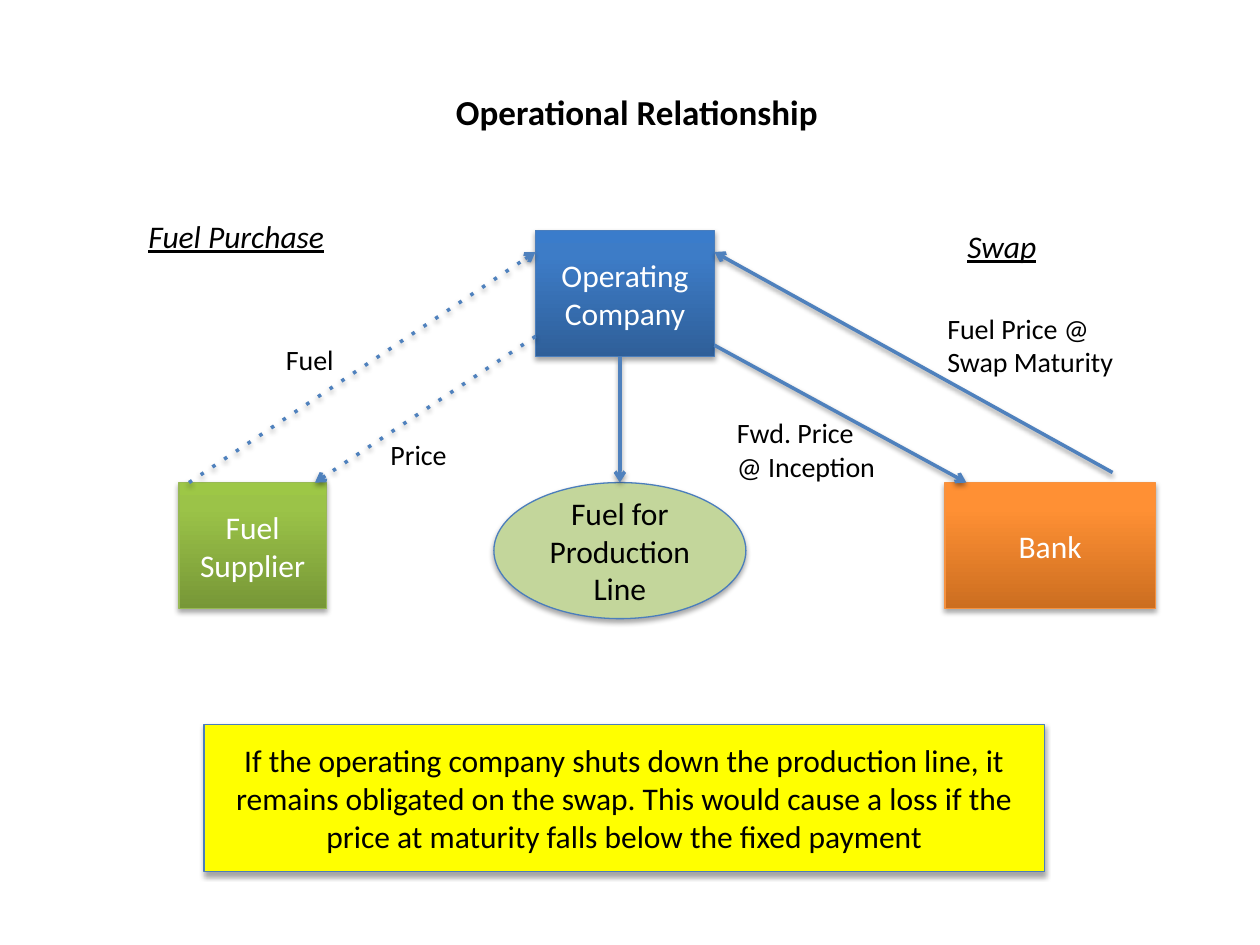
from copy import deepcopy
from dataclasses import dataclass

from lxml import etree
from pptx import Presentation
from pptx.dml.color import RGBColor
from pptx.enum.shapes import MSO_CONNECTOR, MSO_SHAPE
from pptx.enum.text import MSO_ANCHOR, MSO_AUTO_SIZE, PP_ALIGN
from pptx.oxml.ns import qn
from pptx.util import Inches, Pt

RECT, OVAL = MSO_SHAPE.RECTANGLE, MSO_SHAPE.OVAL
STRAIGHT = MSO_CONNECTOR.STRAIGHT
LEFT, CENTER = PP_ALIGN.LEFT, PP_ALIGN.CENTER
MIDDLE = MSO_ANCHOR.MIDDLE
FIT_SHAPE = MSO_AUTO_SIZE.SHAPE_TO_FIT_TEXT


@dataclass(frozen=True)
class Theme:
    font: str = "Calibri"
    title: int = 20
    body: int = 18
    label: int = 16
    black: str = "000000"
    white: str = "FFFFFF"
    outline: str = "4B7EBC"
    arrow: str = "4F81BD"
    green_outline: str = "98B955"
    orange_outline: str = "F69240"
    sage: str = "C3D69B"
    yellow: str = "FFFF00"
    # Gradients run from bottom to top
    blue: tuple[str, ...] = ("2F5F99", "3D7CC7", "3A7CCB")
    green: tuple[str, ...] = ("779737", "9BC348", "9DC746")
    orange: tuple[str, ...] = ("CC6E20", "FF9034", "FF9136")
    stops: tuple[float, ...] = (0, 0.8, 1)


THEME = Theme()


@dataclass(frozen=True)
class Node:
    text: str
    at: tuple[float, float, float, float]
    fill: str | tuple[str, ...]
    line: str = THEME.outline
    color: str = THEME.white
    preset: MSO_SHAPE = RECT


@dataclass(frozen=True)
class Arrow:
    start: tuple[float, float]
    end: tuple[float, float]
    dotted: bool = False


@dataclass(frozen=True)
class Label:
    text: str
    at: tuple[float, float, float, float]
    size: int = THEME.label
    align: PP_ALIGN = LEFT
    bold: bool = False
    heading: bool = False
    wrap: bool = True


def write(tf, text: str, *, size: int, color: str = THEME.black, align=LEFT,
          bold: bool = False, italic: bool = False, underline: bool = False) -> None:
    for i, line in enumerate(text.split("\n")):
        p = tf.add_paragraph() if i else tf.paragraphs[0]
        p.alignment = align
        r = p.add_run()
        r.text = line
        f = r.font
        f.name, f.size = THEME.font, Pt(size)
        f.bold, f.italic, f.underline = bold, italic, underline
        f.color.rgb = RGBColor.from_string(color)


def add_shadow(sp, opacity: int, distance: float) -> None:
    effects = etree.SubElement(sp._element.spPr, qn("a:effectLst"))
    shadow = etree.SubElement(effects, qn("a:outerShdw"), blurRad=str(Pt(3.1)),
                              dist=str(Pt(distance)), dir="5400000", rotWithShape="0")
    color = etree.SubElement(shadow, qn("a:srgbClr"), val=THEME.black)
    etree.SubElement(color, qn("a:alpha"), val=str(opacity * 1000))


def fill_gradient(sp, colors: tuple[str, ...]) -> None:
    sp.fill.gradient()
    sp.fill.gradient_angle = 90
    stop_list = sp._element.spPr.find(f".//{qn('a:gsLst')}")
    stop_list.append(deepcopy(stop_list[0]))
    for stop, position, color in zip(sp.fill.gradient_stops, THEME.stops, colors):
        stop.position = position
        stop.color.rgb = RGBColor.from_string(color)


def add_node(s, node: Node) -> None:
    sp = s.shapes.add_shape(node.preset, *map(Inches, node.at))
    if isinstance(node.fill, tuple):
        fill_gradient(sp, node.fill)
    else:
        sp.fill.solid()
        sp.fill.fore_color.rgb = RGBColor.from_string(node.fill)
    sp.line.color.rgb = RGBColor.from_string(node.line)
    sp.line.width = Pt(0.75)
    add_shadow(sp, 35, 1.8)
    tf = sp.text_frame
    tf.word_wrap, tf.vertical_anchor = True, MIDDLE
    write(tf, node.text, size=THEME.body, color=node.color, align=CENTER)


def add_arrow(s, arrow: Arrow) -> None:
    sp = s.shapes.add_connector(STRAIGHT, *map(Inches, arrow.start + arrow.end))
    sp.line.color.rgb = RGBColor.from_string(THEME.arrow)
    sp.line.width = Pt(2)
    ln = sp._element.spPr.find(qn("a:ln"))
    if arrow.dotted:
        etree.SubElement(ln, qn("a:prstDash"), val="dot")
    etree.SubElement(ln, qn("a:tailEnd"), type="arrow")
    add_shadow(sp, 38, 1.6)


def add_label(s, label: Label) -> None:
    tf = s.shapes.add_textbox(*map(Inches, label.at)).text_frame
    tf.word_wrap, tf.auto_size = label.wrap, FIT_SHAPE
    write(tf, label.text, size=label.size, align=label.align, bold=label.bold,
          italic=label.heading, underline=label.heading)


# Parties, the production line and the conclusion
NODES = [
    Node("Operating Company", (4.25, 1.83, 1.42, 1), THEME.blue),
    Node("Fuel Supplier", (1.42, 3.83, 1.17, 1), THEME.green, THEME.green_outline),
    Node("Bank", (7.5, 3.83, 1.67, 1), THEME.orange, THEME.orange_outline),
    Node("Fuel for Production Line", (3.92, 3.83, 2, 1.08), THEME.sage,
         color=THEME.black, preset=OVAL),
    Node("If the operating company shuts down the production line, it remains "
         "obligated on the swap. This would cause a loss if the price at maturity "
         "falls below the fixed payment",
         (1.62, 5.75, 6.67, 1.17), THEME.yellow, color=THEME.black),
]

# Flows: fuel purchase, production, swap
ARROWS = [
    Arrow((1.5, 3.83), (4.25, 2), dotted=True),
    Arrow((4.25, 2.67), (2.5, 3.83), dotted=True),
    Arrow((4.92, 2.83), (4.92, 3.83)),
    Arrow((5.67, 2.74), (7.67, 3.83)),
    Arrow((8.83, 3.75), (5.67, 2)),
]

# Title, headings and flow labels
LABELS = [
    Label("Operational Relationship", (3.44, 0.67, 3.23, 0.44), THEME.title,
          CENTER, bold=True),
    Label("Fuel Purchase", (1.08, 1.67, 2.71, 0.4), THEME.body, heading=True),
    Label("Swap", (7.58, 1.75, 1.33, 0.42), THEME.body, heading=True),
    Label("Fuel", (2.17, 2.67, 0.88, 0.37)),
    Label("Price", (3, 3.42, 0.88, 0.37)),
    Label("Fuel Price @\nSwap Maturity", (7.42, 2.42, 1.54, 0.64), wrap=False),
    Label("Fwd. Price @ Inception", (5.75, 3.25, 1.33, 0.64)),
]


def main() -> None:
    prs = Presentation()
    prs.slide_width, prs.slide_height = Inches(10), Inches(7.5)
    s = prs.slides.add_slide(prs.slide_layouts[6])
    for node in NODES:
        add_node(s, node)
    for arrow in ARROWS:
        add_arrow(s, arrow)
    for label in LABELS:
        add_label(s, label)
    prs.save("out.pptx")


if __name__ == "__main__":
    main()
